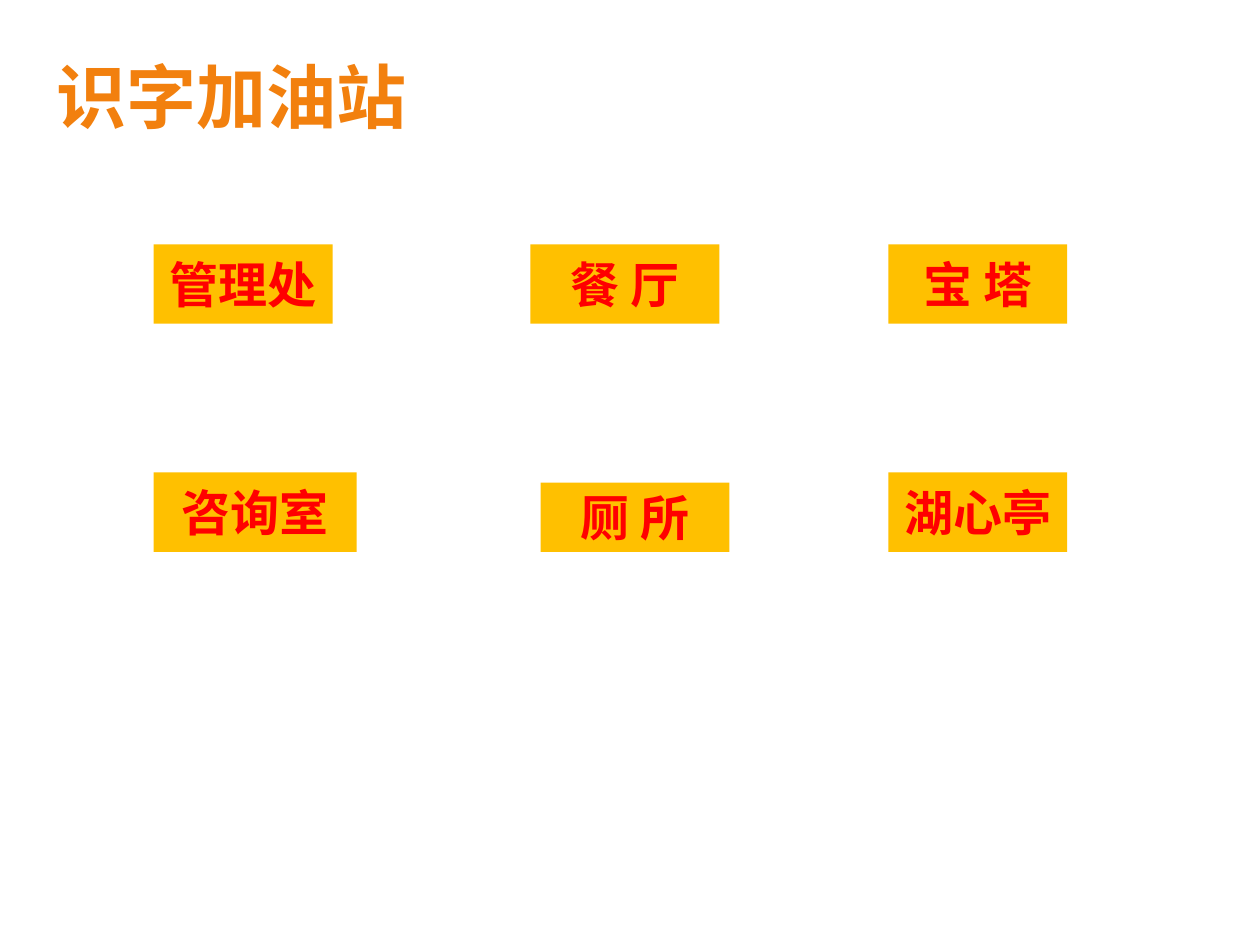
import pptx
import pptx.dml.color
import pptx.enum.shapes
import pptx.enum.text
import pptx.oxml
import pptx.oxml.ns
import pptx.util
from pptx.util import Inches

ORANGE = pptx.dml.color.RGBColor(0xF2, 0x80, 0x0E)
AMBER = pptx.dml.color.RGBColor(0xFF, 0xC0, 0x00)
RED = pptx.dml.color.RGBColor(0xFF, 0x00, 0x00)
CJK_FONT = "Noto Sans CJK SC"

# Word, left, top, width and height in inches; each row shares a bottom edge.
WORD_CARDS = [
    ("管理处", 1.22, 1.94, 1.42, 0.63),
    ("餐 厅", 4.21, 1.94, 1.5, 0.63),
    ("宝 塔", 7.05, 1.94, 1.42, 0.63),
    ("咨询室", 1.22, 3.75, 1.61, 0.63),
    ("厕 所", 4.29, 3.83, 1.5, 0.55),
    ("湖心亭", 7.05, 3.75, 1.42, 0.63),
]


def place(shape, box):
    shape.left, shape.top, shape.width, shape.height = map(Inches, box)


def format_run(run, size, color, latin_font):
    """Style a bold run, with the CJK font for its Chinese characters."""
    run.font.size = pptx.util.Pt(size)
    run.font.bold = True
    run.font.color.rgb = color
    run.font.name = latin_font
    east_asian = pptx.oxml.parse_xml(
        f'<a:ea {pptx.oxml.ns.nsdecls("a")} typeface="{CJK_FONT}"/>')
    run.font._element.append(east_asian)


def add_title(slide, text, box):
    title = slide.shapes.title
    place(title, box)
    frame = title.text_frame
    frame.text = text
    frame.vertical_anchor = pptx.enum.text.MSO_ANCHOR.BOTTOM
    paragraph = frame.paragraphs[0]
    paragraph.alignment = pptx.enum.text.PP_ALIGN.LEFT
    paragraph.line_spacing = 0.9
    run = paragraph.runs[0]
    format_run(run, 40, ORANGE, "Arial")
    outline = pptx.oxml.parse_xml(
        f'<a:ln {pptx.oxml.ns.nsdecls("a")} w="{pptx.util.Pt(0.5)}">'
        '<a:solidFill><a:srgbClr val="FFFFFF"/></a:solidFill></a:ln>')
    run.font._element.insert(0, outline)


def add_word_card(slide, word, box):
    card = slide.shapes.add_shape(
        pptx.enum.shapes.MSO_SHAPE.RECTANGLE, *map(Inches, box))
    card.shadow.inherit = False
    card.fill.solid()
    card.fill.fore_color.rgb = AMBER
    card.line.fill.background()
    frame = card.text_frame
    frame.text = word
    frame.word_wrap = True
    frame.vertical_anchor = pptx.enum.text.MSO_ANCHOR.MIDDLE
    paragraph = frame.paragraphs[0]
    paragraph.alignment = pptx.enum.text.PP_ALIGN.CENTER
    format_run(paragraph.runs[0], 28, RED, CJK_FONT)


def main():
    presentation = pptx.Presentation()
    presentation.slide_width = Inches(10)
    presentation.slide_height = Inches(7.5)
    slide = presentation.slides.add_slide(presentation.slide_layouts[5])
    add_title(slide, "识字加油站", (0.35, 0.18, 9.17, 0.97))
    for word, *box in WORD_CARDS:
        add_word_card(slide, word, box)
    presentation.save("out.pptx")


if __name__ == "__main__":
    main()
